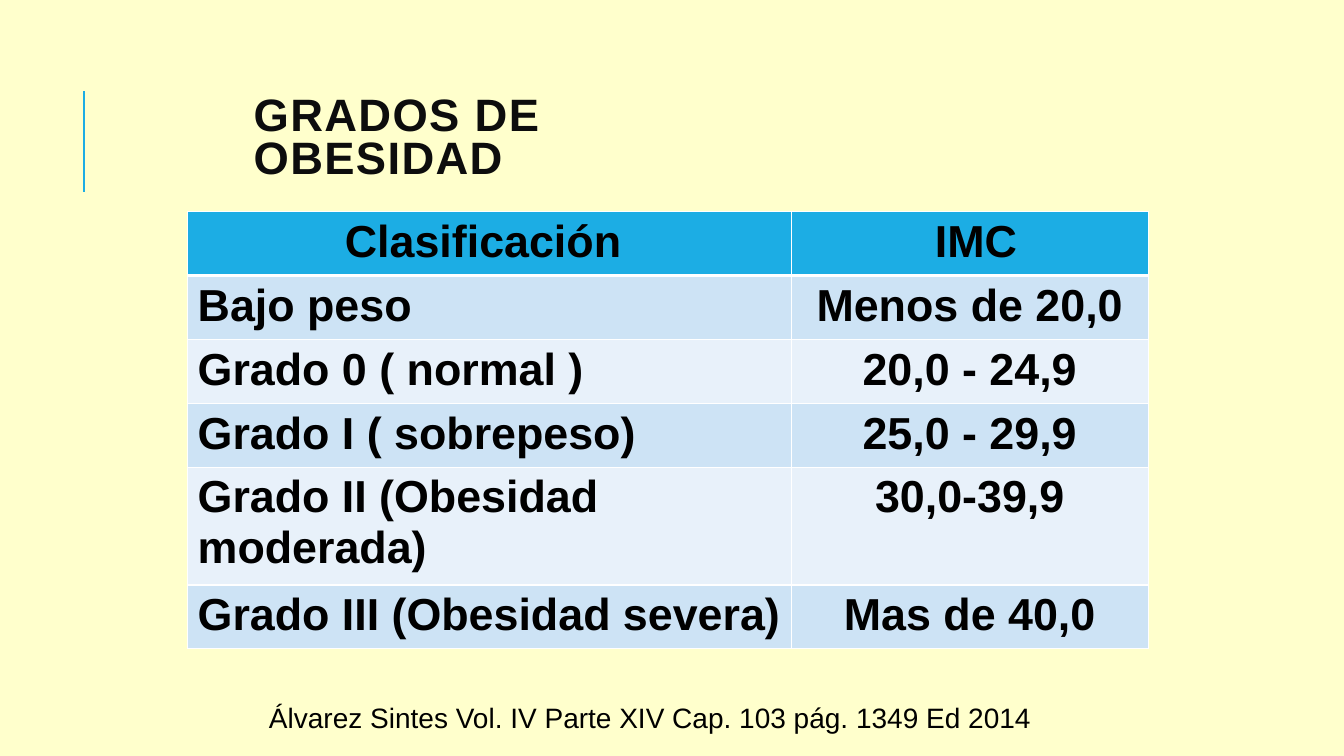
from lxml import etree
from pptx import Presentation
from pptx.dml.color import RGBColor
from pptx.enum.shapes import MSO_CONNECTOR
from pptx.enum.text import MSO_ANCHOR, PP_ALIGN
from pptx.oxml.ns import qn
from pptx.util import Pt

STRAIGHT = MSO_CONNECTOR.STRAIGHT
MIDDLE, TOP = MSO_ANCHOR.MIDDLE, MSO_ANCHOR.TOP
LEFT, CENTER = PP_ALIGN.LEFT, PP_ALIGN.CENTER
FONT = "Arial"
COLORS = {
    "background": "FFFFCC",
    "accent": "1CADE4",
    "title": "0D0D0D",
    "text": "000000",
    "odd row": "CDE3F5",
    "even row": "E8F1FA",
    "grid": "FFFFFF",
}
GRADES = [
    ("Clasificación ", " IMC"),
    ("Bajo peso", "Menos de 20,0"),
    ("Grado 0 ( normal )", "20,0 - 24,9"),
    ("Grado I ( sobrepeso)", "25,0 - 29,9"),
    ("Grado II (Obesidad moderada)", "30,0-39,9"),
    ("Grado III (Obesidad severa)", "Mas de 40,0"),
]


def rgb(name):
    return RGBColor.from_string(COLORS[name])


def write(paragraph, words, size, color="text", bold=False, align=LEFT):
    paragraph.alignment = align
    run = paragraph.add_run()
    run.text = words
    run.font.name = FONT
    run.font.size = Pt(size)
    run.font.bold = bold
    run.font.color.rgb = rgb(color)
    return run


def add_text_frame(slide, left, top, width, height, anchor):
    frame = slide.shapes.add_textbox(Pt(left), Pt(top), Pt(width), Pt(height)).text_frame
    frame.word_wrap = True
    frame.vertical_anchor = anchor
    return frame


def add_accent_line(slide, x, top, height):
    accent = slide.shapes.add_connector(STRAIGHT, Pt(x), Pt(top + height), Pt(x), Pt(top))
    accent.line.color.rgb = rgb("accent")
    accent.line.width = Pt(1.5)
    etree.SubElement(accent._element.spPr, qn("a:effectLst"))


def add_title(slide, left, top, width, height):
    frame = add_text_frame(slide, left, top, width, height, MIDDLE)
    frame.margin_right = Pt(20)
    heading = frame.paragraphs[0]
    heading.line_spacing = 0.8
    run = write(heading, "GRADOS DE OBESIDAD", 32.4, "title", bold=True)
    run.font._element.set("spc", "100")


def set_borders(cell, bottom_width):
    """Outline a cell; the border elements must precede its fill."""
    properties = cell._tc.get_or_add_tcPr()
    widths = {"a:lnL": 1, "a:lnR": 1, "a:lnT": 1, "a:lnB": bottom_width}
    for position, (side, width) in enumerate(widths.items()):
        border = etree.Element(qn(side), w=str(Pt(width)))
        fill = etree.SubElement(border, qn("a:solidFill"))
        etree.SubElement(fill, qn("a:srgbClr"), val=COLORS["grid"])
        properties.insert(position, border)


def add_grades_table(slide, left, top, width, header_height, row_height):
    height = header_height + row_height * (len(GRADES) - 1)
    grades = slide.shapes.add_table(
        len(GRADES), 2, Pt(left), Pt(top), Pt(width), Pt(height)).table
    class_width = 431.3
    grades.columns[0].width = Pt(class_width)
    grades.columns[1].width = Pt(width - class_width)
    for r, row in enumerate(GRADES):
        is_header = r == 0
        grades.rows[r].height = Pt(header_height if is_header else row_height)
        fill = "accent" if is_header else "odd row" if r % 2 else "even row"
        for c, words in enumerate(row):
            cell = grades.cell(r, c)
            cell.fill.solid()
            cell.fill.fore_color.rgb = rgb(fill)
            set_borders(cell, 3 if is_header else 1)
            align = CENTER if is_header or c == 1 else LEFT
            write(cell.text_frame.paragraphs[0], words, 32, bold=True, align=align)


def add_citation(slide, left, top, width, height):
    frame = add_text_frame(slide, left, top, width, height, TOP)
    write(frame.paragraphs[0],
          "Álvarez Sintes Vol. IV Parte XIV Cap. 103 pág. 1349 Ed 2014", 20)


def main():
    deck = Presentation()
    deck.slide_width, deck.slide_height = Pt(960), Pt(540)
    slide = deck.slides.add_slide(deck.slide_layouts[6])
    slide.background.fill.solid()
    slide.background.fill.fore_color.rgb = rgb("background")
    add_accent_line(slide, 60, 65, 72)
    add_title(slide, 174.2, 71.3, 407.5, 57)
    add_grades_table(slide, 134, 151.2, 686.2, 41.8, 45.4)
    add_citation(slide, 185, 496.8, 618.5, 31.7)
    deck.save("out.pptx")


if __name__ == "__main__":
    main()
